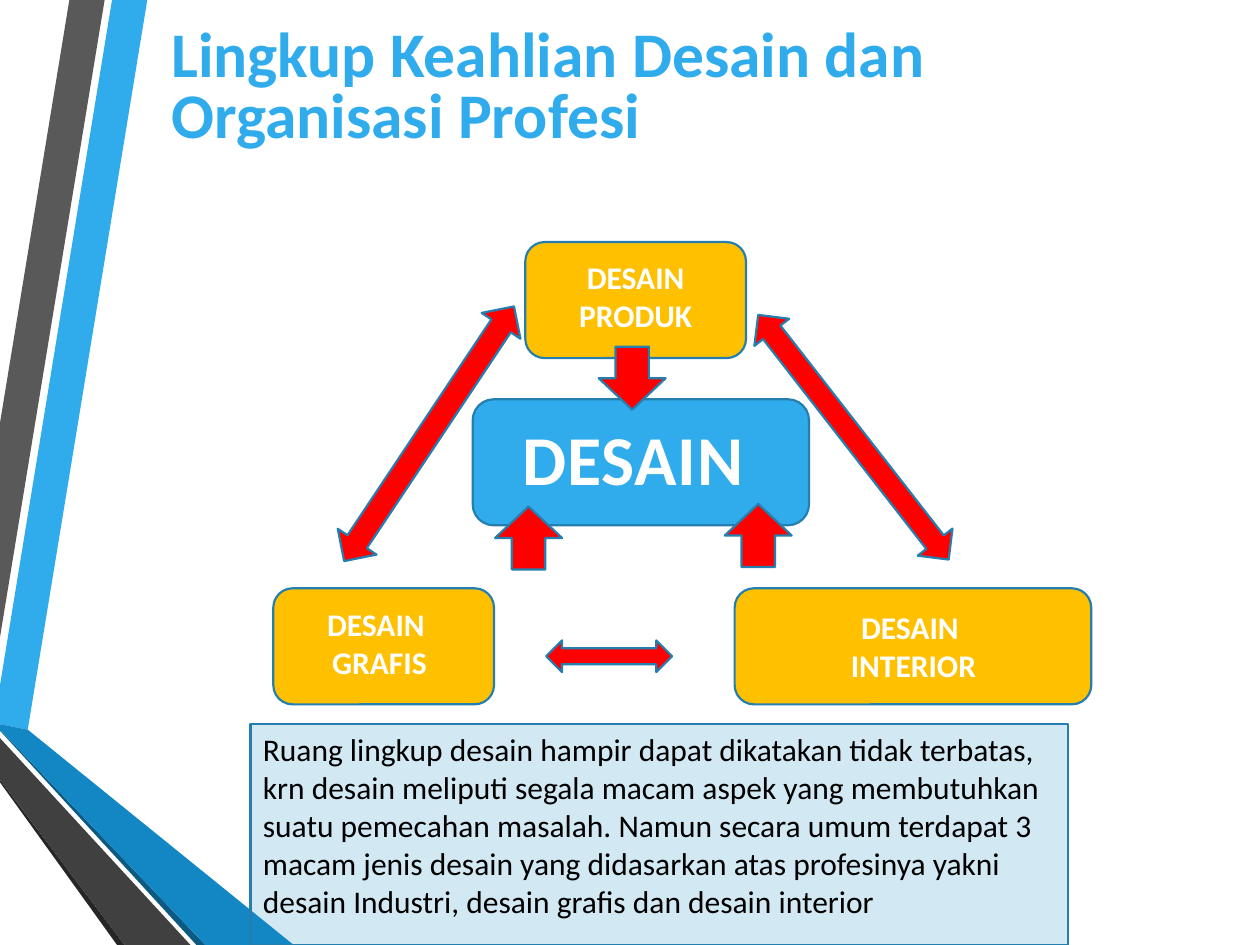
import pptx
import pptx.dml.color
import pptx.enum.shapes
import pptx.enum.text
import pptx.oxml
import pptx.oxml.ns
import pptx.util
from pptx.util import Cm

RGBColor = pptx.dml.color.RGBColor
SHAPE = pptx.enum.shapes.MSO_SHAPE
ALIGN = pptx.enum.text.PP_ALIGN
ANCHOR = pptx.enum.text.MSO_ANCHOR

SKY = RGBColor(0x30, 0xAC, 0xEC)
BLUE = RGBColor(0x12, 0x87, 0xC3)
DEEP_BLUE = RGBColor(0x0C, 0x5A, 0x82)
EDGE = RGBColor(0x24, 0x7F, 0xAF)
GRAY = RGBColor(0x59, 0x59, 0x59)
DARK = RGBColor(0x40, 0x40, 0x40)
DARKER = RGBColor(0x26, 0x26, 0x26)
AMBER = RGBColor(0xFF, 0xC0, 0x00)
RED = RGBColor(0xFF, 0x00, 0x00)
WHITE = RGBColor(0xFF, 0xFF, 0xFF)
OFF_WHITE = RGBColor(0xFE, 0xFE, 0xFF)
BLACK = RGBColor(0x00, 0x00, 0x00)
VIOLET = RGBColor(0x97, 0x51, 0xD7)


def paint(shape, fill, edge=None):
    shape.shadow.inherit = False
    shape.fill.solid()
    shape.fill.fore_color.rgb = fill
    if edge is None:
        shape.line.fill.background()
    else:
        shape.line.color.rgb = edge
        shape.line.width = pptx.util.Pt(1.25)


def write(frame, lines, size, color, bold, align):
    """Fill a text frame with one paragraph per line."""
    frame.text = "\n".join(lines)
    font_format = {"name": "Calibri", "size": pptx.util.Pt(size), "bold": bold}
    for paragraph in frame.paragraphs:
        paragraph.alignment = align
        font = paragraph.runs[0].font
        for attribute, value in font_format.items():
            setattr(font, attribute, value)
        font.color.rgb = color


presentation = pptx.Presentation()
presentation.slide_width, presentation.slide_height = Cm(25.4), Cm(19.05)
slide = presentation.slides.add_slide(presentation.slide_layouts[5])
shapes = slide.shapes

# Ribbon on the left edge
ribbon = [
    (SKY, [(0, 13.82), (0, 14.6), (0.56, 14.71), (2.97, 0), (2.26, 0)]),
    (GRAY, [(2.11, 0), (1.4, 0), (0, 8.53), (0, 12.85)]),
    (DARKER, [(0, 15.72), (0, 15.77), (2.36, 19.05), (2.51, 19.05)]),
    (DEEP_BLUE, [(0, 14.71), (0, 14.73), (3.96, 19.05), (4.14, 19.05)]),
    (BLUE, [(0, 14.71), (4.14, 19.05), (5.92, 19.05), (0.56, 14.71), (0, 14.6)]),
    (DARK, [(0, 15.72), (2.51, 19.05), (3.84, 19.05), (0, 14.88)]),
]
for color, corners in ribbon:
    start, *rest = [(Cm(x), Cm(y)) for x, y in corners]
    outline = shapes.build_freeform(*start)
    outline.add_line_segments(rest, close=True)
    paint(outline.convert_to_shape(), color)

# Title
title = shapes.title
title_box = {"left": Cm(3.2), "top": Cm(0.43), "width": Cm(20.52), "height": Cm(2.74)}
for attribute, value in title_box.items():
    setattr(title, attribute, value)
write(title.text_frame, ["Lingkup Keahlian Desain dan Organisasi Profesi"],
      36.3, SKY, True, ALIGN.LEFT)
title_format = {"vertical_anchor": ANCHOR.MIDDLE, "word_wrap": True,
                "auto_size": pptx.enum.text.MSO_AUTO_SIZE.NONE}
for attribute, value in title_format.items():
    setattr(title.text_frame, attribute, value)
title.text_frame.paragraphs[0].line_spacing = 0.8

# Explanation
explanation = shapes.add_shape(SHAPE.RECTANGLE, Cm(5.05), Cm(14.6), Cm(16.48), Cm(4.45))
paint(explanation, BLUE, EDGE)
tint = explanation.fill._xPr.find(".//" + pptx.oxml.ns.qn("a:srgbClr"))
tint.append(pptx.oxml.parse_xml(
    f'<a:alpha {pptx.oxml.ns.nsdecls("a")} val="19000"/>'))
explanation.text_frame.vertical_anchor = ANCHOR.TOP
write(explanation.text_frame, [
    "Ruang lingkup desain hampir dapat dikatakan tidak terbatas, krn desain "
    "meliputi segala macam aspek yang membutuhkan suatu pemecahan masalah. "
    "Namun secara umum terdapat 3 macam jenis desain yang didasarkan atas "
    "profesinya yakni desain Industri, desain grafis dan desain interior",
], 18, BLACK, False, ALIGN.LEFT)

# Fields of design: card box, label box, lines, size, fill, text colour, wrap
fields = [
    ((10.59, 4.88, 4.45, 2.34), (11, 5.08, 3.63, 1.8),
     ["DESAIN PRODUK"], 18, AMBER, WHITE, True),
    ((9.53, 8.05, 6.78, 2.54), (10.16, 8.26, 5.21, 1.96),
     ["DESAIN"], 40, SKY, OFF_WHITE, False),
    ((5.51, 11.86, 4.45, 2.34), (6.2, 12.07, 2.9, 1.8),
     ["DESAIN ", "GRAFIS"], 18, AMBER, WHITE, False),
    ((14.81, 11.86, 7.19, 2.34), (16.74, 12.14, 3.35, 1.8),
     ["DESAIN ", "INTERIOR"], 18, AMBER, WHITE, False),
]
for card_box, label_box, lines, size, fill, color, wrap in fields:
    card = shapes.add_shape(SHAPE.ROUNDED_RECTANGLE, *map(Cm, card_box))
    paint(card, fill, EDGE)
    label = shapes.add_textbox(*map(Cm, label_box))
    label.text_frame.word_wrap = wrap
    write(label.text_frame, lines, size, color, True, ALIGN.CENTER)
    if fill == SKY:
        lettering = label.text_frame.paragraphs[0].runs[0].font._element
        lettering.set("spc", "50")
        lettering.insert(0, pptx.oxml.parse_xml(
            f'<a:ln {pptx.oxml.ns.nsdecls("a")} w="12700"><a:solidFill>'
            f'<a:srgbClr val="{VIOLET}"/></a:solidFill></a:ln>'))

# Arrows between the fields, then arrows into the centre
arrows = [
    (SHAPE.UP_DOWN_ARROW, (8.18, 5.66, 0.94, 6.17), 33.7),
    (SHAPE.UP_DOWN_ARROW, (16.76, 5.69, 0.89, 6.25), 322.1),
    (SHAPE.UP_DOWN_ARROW, (11.96, 11.96, 0.64, 2.54), 90),
    (SHAPE.DOWN_ARROW, (12.07, 6.99, 1.35, 1.27), 0),
    (SHAPE.DOWN_ARROW, (9.98, 10.21, 1.35, 1.27), 180),
    (SHAPE.DOWN_ARROW, (14.61, 10.16, 1.35, 1.27), 180),
]
for preset, box, angle in arrows:
    arrow = shapes.add_shape(preset, *map(Cm, box))
    arrow.rotation = angle
    paint(arrow, RED, EDGE)

presentation.save("out.pptx")
